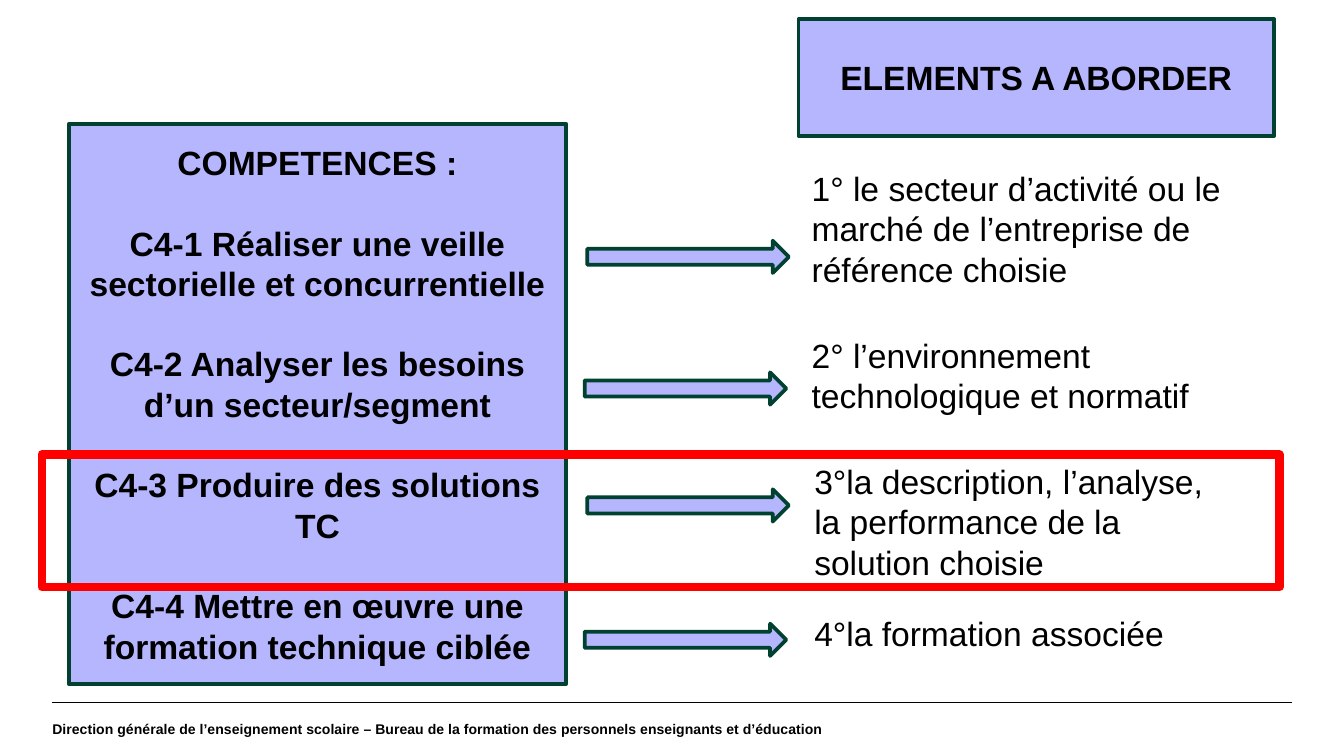
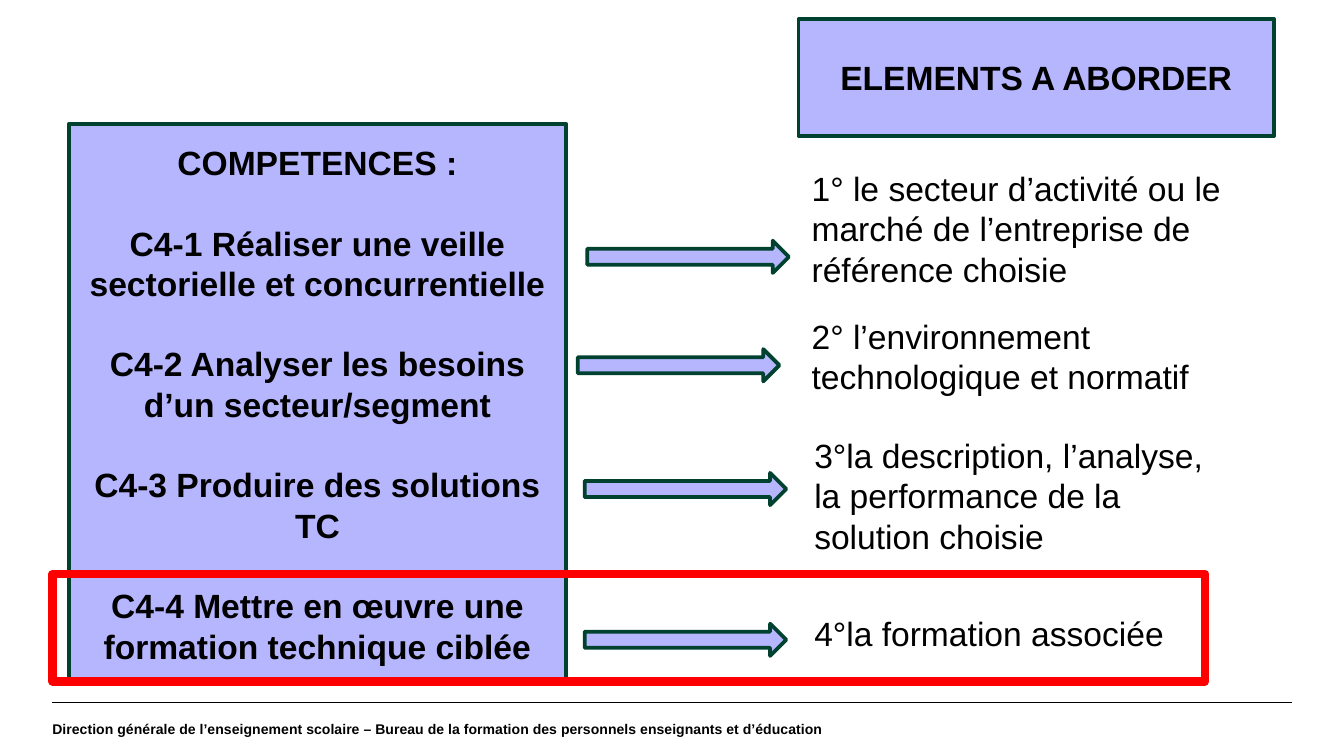
from lxml import etree
from pptx import Presentation
from pptx.dml.color import RGBColor
from pptx.enum.shapes import MSO_CONNECTOR, MSO_SHAPE
from pptx.enum.text import MSO_ANCHOR, MSO_AUTO_SIZE, PP_ALIGN
from pptx.oxml.ns import qn
from pptx.util import Cm, Pt

RECT, ARROW = MSO_SHAPE.RECTANGLE, MSO_SHAPE.RIGHT_ARROW
LINE = MSO_CONNECTOR.STRAIGHT
TOP, MIDDLE = MSO_ANCHOR.TOP, MSO_ANCHOR.MIDDLE
LEFT, CENTER = PP_ALIGN.LEFT, PP_ALIGN.CENTER
FIXED, GROW = MSO_AUTO_SIZE.NONE, MSO_AUTO_SIZE.SHAPE_TO_FIT_TEXT

BLACK = RGBColor(0, 0, 0)
LILAC = RGBColor(0xB6, 0xB6, 0xFF)
GREEN = RGBColor(0x00, 0x41, 0x30)
RED = RGBColor(0xFF, 0, 0)

TITLE = "ELEMENTS A ABORDER"
FOOTER = ("Direction générale de l’enseignement scolaire – Bureau de la "
          "formation des personnels enseignants et d’éducation")
SKILLS = [
    "COMPETENCES :",
    "C4-1 Réaliser une veille sectorielle et concurrentielle",
    "C4-2 Analyser les besoins d’un secteur/segment",
    "C4-3 Produire des solutions TC",
    "C4-4 Mettre en œuvre une formation technique ciblée",
]
# Topic text, left, width, height
TOPICS = [
    ("1° le secteur d’activité ou le marché de l’entreprise de référence choisie",
     15.09, 10.01, 2.57),
    ("2° l’environnement technologique et normatif", 15.09, 9.8, 1.8),
    ("3°la description, l’analyse, la performance de la solution choisie",
     15.14, 8.41, 2.57),
    ("4°la formation associée", 15.14, 8.97, 1.02),
]
# Per slide: topic tops, arrow corners, red frame
SLIDES = [
    ([3.05, 6.2, 8.59, 11.46],
     [(11.1, 4.55), (11.05, 7.04), (11.1, 9.25), (11.05, 11.79)],
     (0.79, 8.59, 23.39, 2.51)),
    ([3.05, 5.84, 8.1, 11.46],
     [(11.1, 4.55), (10.92, 6.6), (11.05, 8.94), (11.05, 11.79)],
     (0.99, 10.85, 21.79, 2.03)),
]


def write(shape, *texts, size=18, bold=False, align=LEFT, anchor=TOP,
          fit=FIXED, gap=0, inset=None):
    frame = shape.text_frame
    frame.word_wrap = True
    frame.auto_size = fit
    frame.vertical_anchor = anchor
    if inset is not None:
        frame.margin_left = frame.margin_right = Cm(inset)
        frame.margin_top = frame.margin_bottom = Cm(inset)
    for i, text in enumerate(texts):
        para = frame.add_paragraph() if i else frame.paragraphs[0]
        para.alignment = align
        if i:
            para.space_before = Pt(gap)
        run = para.add_run()
        run.text = text
        run.font.name = "Arial"
        run.font.size = Pt(size)
        run.font.bold = bold
        run.font.color.rgb = BLACK


def paint(shape, fill=LILAC, line=GREEN, width=2):
    if fill is None:
        shape.fill.background()
    else:
        shape.fill.solid()
        shape.fill.fore_color.rgb = fill
    shape.line.color.rgb = line
    shape.line.width = Pt(width)
    shape.shadow.inherit = False


deck = Presentation()
deck.slide_width, deck.slide_height = Cm(25.4), Cm(14.29)

for tops, arrows, frame in SLIDES:
    slide = deck.slides.add_slide(deck.slide_layouts[5])
    shapes = slide.shapes

    # Title box
    title = shapes.title
    title.left, title.top = Cm(15.09), Cm(0.36)
    title.width, title.height = Cm(8.99), Cm(2.21)
    paint(title)
    write(title, TITLE, bold=True, align=CENTER, anchor=MIDDLE)

    # Footer rule and text
    rule = shapes.add_connector(LINE, Cm(0.99), Cm(13.28), Cm(24.41), Cm(13.28))
    rule.line.color.rgb = BLACK
    rule.line.width = Pt(0.8)
    etree.SubElement(rule.line._get_or_add_ln().getparent(), qn("a:effectLst"))
    foot = shapes.add_textbox(Cm(0.99), Cm(13.28), Cm(16.41), Cm(0.99))
    write(foot, FOOTER, size=7.5, bold=True, anchor=MIDDLE, inset=0)

    # Skills panel
    panel = shapes.add_shape(RECT, Cm(1.3), Cm(2.34), Cm(9.4), Cm(10.59))
    paint(panel)
    write(panel, *SKILLS, bold=True, align=CENTER, anchor=MIDDLE, gap=21.6)

    # Arrows and topics
    for (text, left, width, height), top, (x, y) in zip(TOPICS, tops, arrows):
        paint(shapes.add_shape(ARROW, Cm(x), Cm(y), Cm(3.81), Cm(0.61)))
        topic = shapes.add_textbox(Cm(left), Cm(top), Cm(width), Cm(height))
        write(topic, text, fit=GROW)

    # Red frame around the current skill
    mark = shapes.add_shape(RECT, *[Cm(n) for n in frame])
    paint(mark, fill=None, line=RED, width=4.5)

deck.save("out.pptx")
